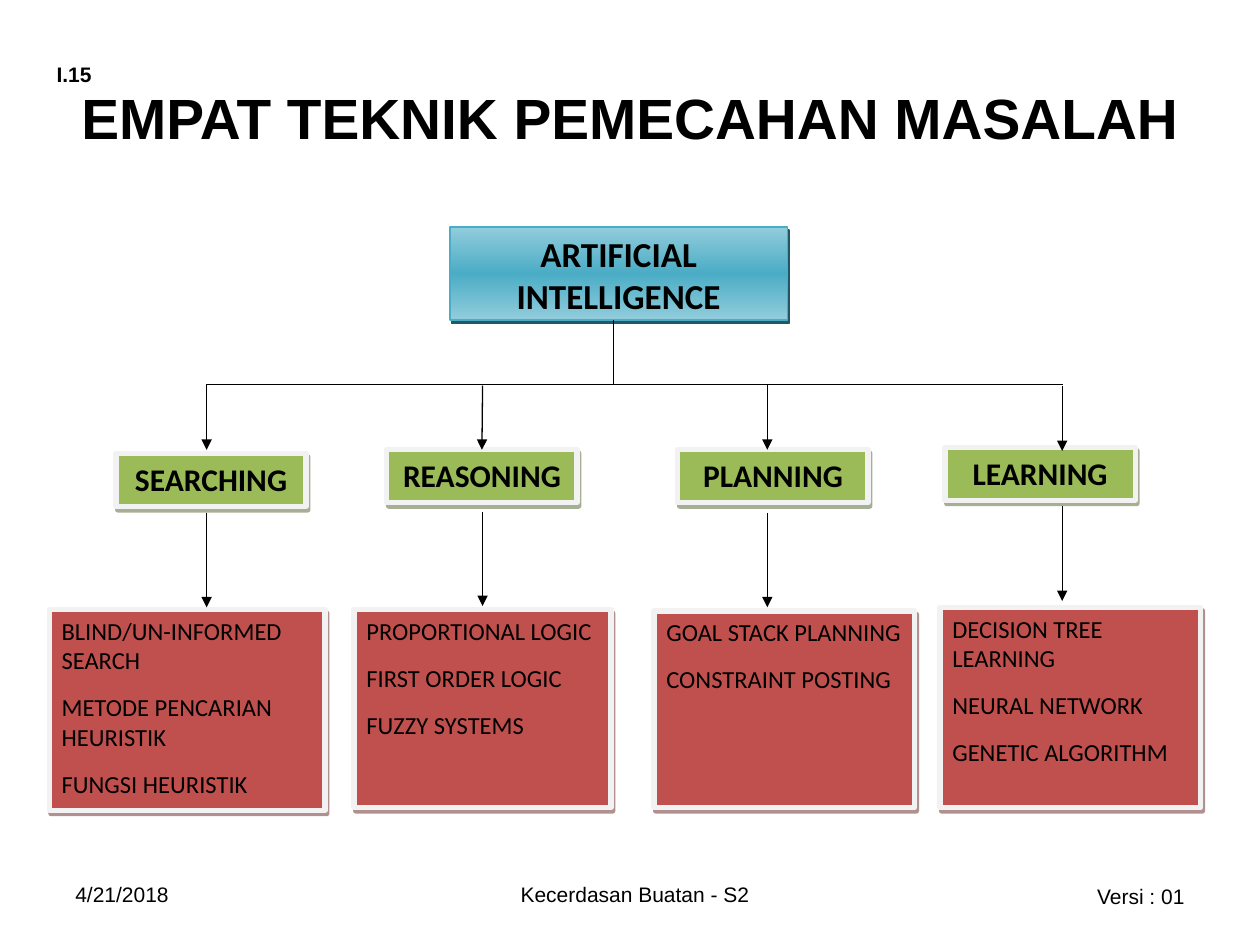
import pptx
import pptx.util
import pptx.dml.color
import pptx.enum.shapes
import pptx.enum.text
import pptx.oxml
import pptx.oxml.ns
from pptx.util import Inches, Pt

ALIGN = pptx.enum.text.PP_ALIGN
ANCHOR = pptx.enum.text.MSO_ANCHOR
RECT = pptx.enum.shapes.MSO_SHAPE.RECTANGLE
STRAIGHT = pptx.enum.shapes.MSO_CONNECTOR.STRAIGHT
rgb = pptx.dml.color.RGBColor.from_string
NS = pptx.oxml.ns.nsdecls("a")


def write(sp, lines, font, size, bold=False, align=ALIGN.LEFT, anchor=ANCHOR.TOP, after=0):
    tf = sp.text_frame
    tf.word_wrap = True
    tf.vertical_anchor = anchor
    tf.text = "\n".join(lines)
    for p in tf.paragraphs:
        p.alignment = align
        p.space_after = Pt(after)
        for r in p.runs:
            r.font.name = font
            r.font.size = Pt(size)
            r.font.bold = bold
            r.font.color.rgb = rgb("000000")


def add_line(x1, y1, x2, y2, arrow=False):
    sp = s.shapes.add_connector(STRAIGHT, Inches(x1), Inches(y1), Inches(x2), Inches(y2))
    sp.line.color.rgb = rgb("000000")
    sp.line.width = Pt(0.75)
    if arrow:
        sp.line._get_or_add_ln().append(pptx.oxml.parse_xml(f'<a:tailEnd {NS} type="triangle"/>'))
    sp._element.spPr.append(pptx.oxml.parse_xml(f"<a:effectLst {NS}/>"))
    return sp


prs = pptx.Presentation()
prs.slide_width, prs.slide_height = Inches(10), Inches(7.5)
s = prs.slides.add_slide(prs.slide_layouts[5])

title = s.shapes.title
title.left, title.top, title.width, title.height = Inches(0.5), Inches(0.3), Inches(9), Inches(1.25)
write(title, ["EMPAT TEKNIK PEMECAHAN MASALAH"], "Arial", 32.4, True, ALIGN.CENTER, ANCHOR.MIDDLE)

# Page number, date, course and version
for text, x, y, w, h, bold, align in [
    ("I.15", 0.35, 0.44, 1.81, 0.3, True, ALIGN.LEFT),
    ("4/21/2018", 0.5, 6.95, 2.33, 0.4, False, ALIGN.LEFT),
    ("Kecerdasan Buatan - S2", 3.19, 6.95, 3.7, 0.4, False, ALIGN.CENTER),
    ("Versi : 01", 7.17, 6.96, 2.33, 0.3, False, ALIGN.RIGHT),
]:
    sp = s.shapes.add_textbox(Inches(x), Inches(y), Inches(w), Inches(h))
    write(sp, [text], "Arial", 12, bold, align)

# Boxes: root, technique names, methods of each technique
ROOT = ("4BACC6", "4BACC6", 1, "205867", 100, 20, True, ALIGN.CENTER)
NAME = ("9BBB59", "F2F2F2", 3, "4E6128", 50, 18, True, ALIGN.CENTER)
METHODS = ("C0504D", "F2F2F2", 3, "622423", 50, 14, False, ALIGN.LEFT)
boxes = {}
for style, lines, x, y, w, h in [
    (ROOT, ["ARTIFICIAL INTELLIGENCE"], 3.57, 1.8, 2.68, 0.74),
    (NAME, ["SEARCHING"], 0.92, 3.6, 1.51, 0.42),
    (NAME, ["REASONING"], 3.07, 3.57, 1.51, 0.42),
    (NAME, ["PLANNING"], 5.38, 3.57, 1.51, 0.42),
    (NAME, ["LEARNING"], 7.5, 3.55, 1.51, 0.42),
    (METHODS, ["BLIND/UN-INFORMED SEARCH", "METODE PENCARIAN HEURISTIK", "FUNGSI HEURISTIK"],
     0.39, 4.84, 2.19, 1.59),
    (METHODS, ["PROPORTIONAL LOGIC", "FIRST ORDER LOGIC", "FUZZY SYSTEMS"], 2.81, 4.84, 2.04, 1.57),
    (METHODS, ["GOAL STACK PLANNING", "CONSTRAINT POSTING"], 5.19, 4.85, 2.07, 1.56),
    (METHODS, ["DECISION TREE LEARNING", "NEURAL NETWORK", "GENETIC ALGORITHM"],
     7.46, 4.82, 2.07, 1.59),
]:
    fill, border, width, shadow, alpha, size, bold, align = style
    sp = s.shapes.add_shape(RECT, Inches(x), Inches(y), Inches(w), Inches(h))
    sp.fill.solid()
    sp.fill.fore_color.rgb = rgb(fill)
    sp.line.color.rgb = rgb(border)
    sp.line.width = Pt(width)
    sp.shadow.inherit = False
    sp._element.spPr.find(pptx.oxml.ns.qn("a:effectLst")).append(pptx.oxml.parse_xml(
        f'<a:outerShdw {NS} blurRad="0" dist="{Pt(2.2)}" dir="{63 * 60000}" algn="ctr" rotWithShape="0">'
        f'<a:srgbClr val="{shadow}"><a:alpha val="{alpha * 1000}"/></a:srgbClr></a:outerShdw>'))
    write(sp, lines, "Calibri", size, bold, align, after=10)
    boxes[lines[0]] = sp

# The root fades from light at both edges to dark in the middle
root_fill = boxes["ARTIFICIAL INTELLIGENCE"]._element.spPr.find(pptx.oxml.ns.qn("a:solidFill"))
stops = "".join(f'<a:gs pos="{pos * 1000}"><a:srgbClr val="{color}"/></a:gs>'
                for pos, color in [(0, "92CDDC"), (50, "4BACC6"), (100, "92CDDC")])
root_fill.getparent().replace(root_fill, pptx.oxml.parse_xml(
    f'<a:gradFill {NS} rotWithShape="1"><a:gsLst>{stops}</a:gsLst>'
    f'<a:lin ang="{90 * 60000}" scaled="0"/></a:gradFill>'))

# Trunk, crossbar and the arrows of each branch
add_line(4.87, 2.54, 4.87, 3.05)
add_line(1.64, 3.05, 8.44, 3.05)
for name, x, upper, lower in [
    ("SEARCHING", 1.64, 3.05, 4.07),
    ("REASONING", 3.83, 3.06, 4.06),
    ("PLANNING", 6.09, 3.05, 4.07),
    ("LEARNING", 8.43, 3.06, 4.02),
]:
    arrow = add_line(x, upper, x, upper + 0.52, arrow=True)
    if name == "REASONING":  # the only branch centred on its box
        arrow.end_connect(boxes[name], 0)
    add_line(x, lower, x, lower + 0.75, arrow=True)

prs.save("out.pptx")
